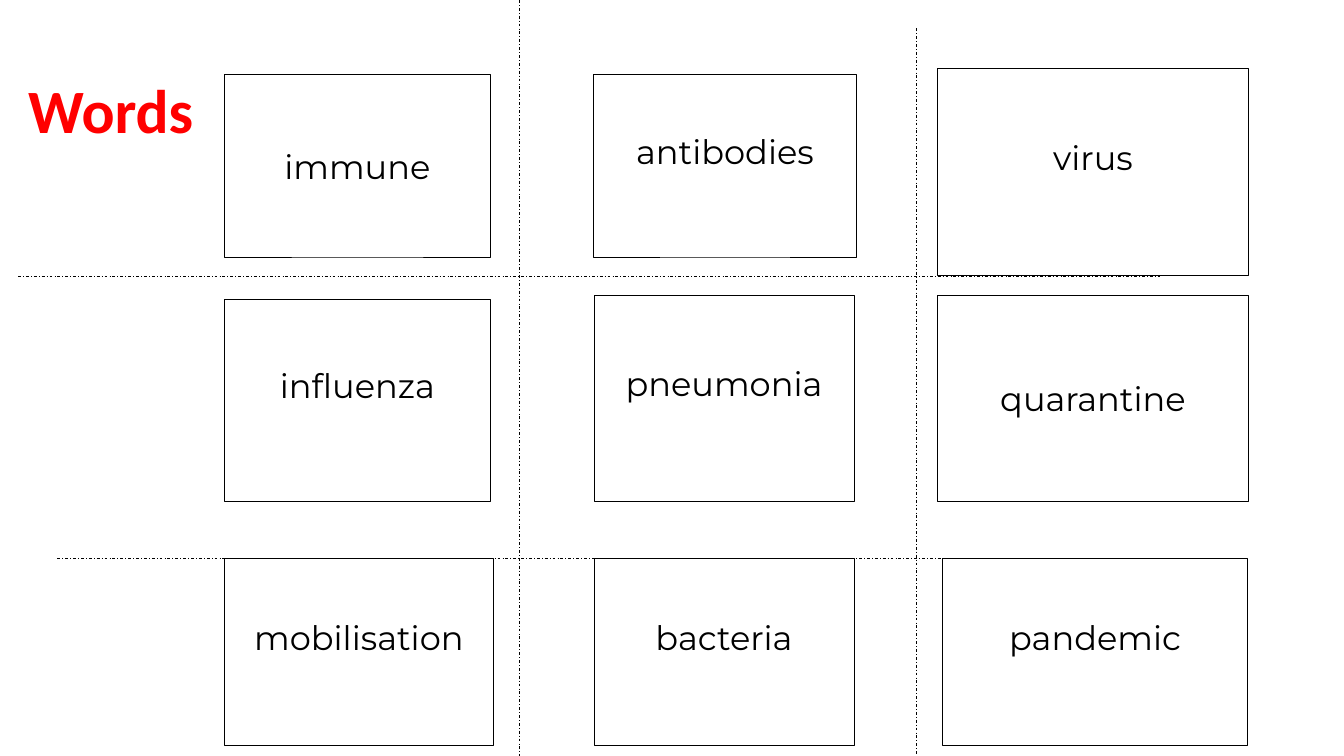
from lxml.etree import SubElement
from pptx import Presentation
from pptx.dml.color import RGBColor
from pptx.enum.dml import MSO_LINE
from pptx.enum.shapes import MSO_CONNECTOR, MSO_SHAPE
from pptx.enum.text import MSO_ANCHOR, PP_ALIGN
from pptx.oxml.ns import qn
from pptx.util import Inches, Pt


def color(value):
    return RGBColor.from_string(value)


class WordSlide:
    ink = "000000"
    paper = "FFFFFF"
    title_font = {"name": "Calibri", "size": Pt(44), "bold": True}
    word_font = {"name": "Montserrat", "size": Pt(24), "bold": False}

    def __init__(self, slide):
        self.shapes = slide.shapes

    def label(self, frame, text, font, ink, paragraph_format, margin_bottom=0.05):
        frame_format = {
            "word_wrap": True,
            "vertical_anchor": MSO_ANCHOR.MIDDLE,
            "margin_bottom": Inches(margin_bottom),
        }
        frame.text = text
        paragraph = frame.paragraphs[0]
        run = paragraph.runs[0]
        for target, values in (
            (frame, frame_format),
            (paragraph, paragraph_format),
            (run.font, font),
        ):
            for name, value in values.items():
                setattr(target, name, value)
        run.font.color.rgb = color(ink)

    def title(self, text, *box):
        heading = self.shapes.add_textbox(*map(Inches, box))
        layout = {"alignment": PP_ALIGN.LEFT, "line_spacing": 0.9}
        self.label(heading.text_frame, text, self.title_font, "FF0000", layout)

    def outline(self, line):
        line.color.rgb = color(self.ink)
        line.width = Pt(0.5)

    def card(self, word, box, raised):
        card = self.shapes.add_shape(MSO_SHAPE.RECTANGLE, *map(Inches, box))
        card.shadow.inherit = False
        card.fill.solid()
        card.fill.fore_color.rgb = color(self.paper)
        self.outline(card.line)
        self.label(card.text_frame, word, self.word_font, self.ink,
                   {"alignment": PP_ALIGN.CENTER}, 0.35 if raised else 0.05)

    def cut_line(self, *ends):
        cut = self.shapes.add_connector(MSO_CONNECTOR.STRAIGHT, *map(Inches, ends))
        self.outline(cut.line)
        cut.line.dash_style = MSO_LINE.DASH_DOT
        SubElement(cut.element.spPr, qn("a:effectLst"))


def main():
    deck = Presentation()
    deck.slide_width, deck.slide_height = Inches(13.33), Inches(7.5)
    page = WordSlide(deck.slides.add_slide(deck.slide_layouts[6]))

    page.title("Words", 0.18, 0.4, 1.84, 1.45)

    centred_words = {"immune", "quarantine"}
    cards = {
        "immune": (2.23, 0.74, 2.63, 1.81),
        "antibodies": (5.89, 0.74, 2.6, 1.81),
        "virus": (9.3, 0.68, 3.08, 2.05),
        "influenza": (2.23, 2.97, 2.63, 2),
        "pneumonia": (5.89, 2.93, 2.58, 2.04),
        "quarantine": (9.3, 2.93, 3.08, 2.04),
        "mobilisation": (2.23, 5.54, 2.66, 1.85),
        "bacteria": (5.89, 5.54, 2.58, 1.85),
        "pandemic": (9.35, 5.54, 3.02, 1.85),
    }
    for word, box in cards.items():
        page.card(word, box, word not in centred_words)

    for left, row in ((0.18, 2.74), (0.57, 5.54)):
        page.cut_line(left, row, left + 11.33, row)
    for column, top in ((5.15, 0), (9.09, 0.28)):
        page.cut_line(column, top, column, 7.5)

    deck.save("out.pptx")


if __name__ == "__main__":
    main()
